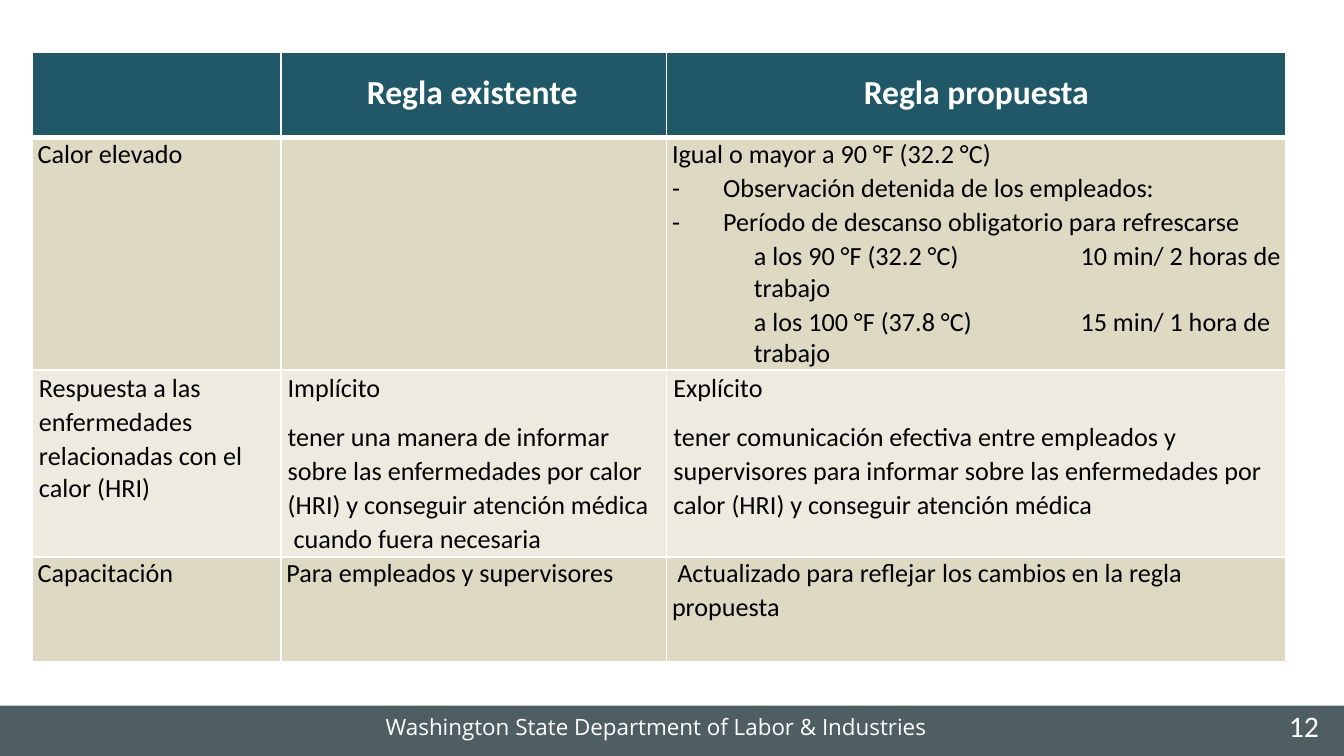
"""Build a slide that sets the current heat rule beside the proposed one."""
from lxml import etree
from pptx import Presentation
from pptx.dml.color import RGBColor
from pptx.enum.shapes import MSO_SHAPE
from pptx.enum.text import PP_ALIGN
from pptx.oxml.ns import qn
from pptx.util import Inches, Pt

RECT = MSO_SHAPE.RECTANGLE
LEFT, MID = PP_ALIGN.LEFT, PP_ALIGN.CENTER
WIDE = 10
HIGH = WIDE * 9 / 16
TEAL, SAND, PALE, SLATE = "205868", "DDD9C3", "EDEBE0", "4F5E63"
WHITE, BLACK = "FFFFFF", "000000"

COLS = [1.85, 2.87, 4.61]
ROWS = [0.63, 1.69, 1.39, 0.78]
FILLS = [TEAL, SAND, PALE, SAND]
STYLES = {
    "head": {"left": 0.64, "before": 11.1},
    "mid": {"before": 11.1, "align": MID},
    "top": {"left": 0.04, "before": 0.9},
    "inset": {"left": 0.08, "before": 0.9},
    "next": {"left": 0.04, "before": 1.2},
    "dash": {"left": 0.42, "first": -0.38, "before": 1.2, "mark": "-"},
    "rest": {"left": 0.65, "before": 1.2, "tab": 2.43},
    "fixed": {"left": 0.05, "before": 0.7, "line": Pt(18)},
    "end": {"left": 0.05, "before": 0.5},
    "kind": {"left": 0.05, "before": 1.1},
    "body": {"left": 0.05, "before": 8.1, "line": 1.07},
}
CELLS = [
    [[], [("head", "Regla existente")], [("mid", "Regla propuesta")]],
    [
        [("top", "Calor elevado")],
        [],
        [
            ("top", "Igual o mayor a 90 °F (32.2 °C)"),
            ("dash", "Observación detenida de los empleados:"),
            ("dash", "Período de descanso obligatorio para refrescarse"),
            ("rest", "a los 90 °F (32.2 °C)\t10 min/ 2 horas de trabajo"),
            ("rest", "a los 100 °F (37.8 °C)\t15 min/ 1 hora de trabajo"),
        ],
    ],
    [
        [
            ("fixed", "Respuesta a las \venfermedades \vrelacionadas con el"),
            ("end", "calor (HRI)"),
        ],
        [
            ("kind", "Implícito"),
            ("body", "tener una manera de informar \vsobre las enfermedades por calor "
                     "\v(HRI) y conseguir atención médica\v cuando fuera necesaria"),
        ],
        [
            ("kind", "Explícito"),
            ("body", "tener comunicación efectiva entre empleados y \vsupervisores para "
                     "informar sobre las enfermedades por \vcalor (HRI) y conseguir "
                     "atención médica"),
        ],
    ],
    [
        [("top", "Capacitación")],
        [("top", "Para empleados y supervisores")],
        [
            ("inset", "Actualizado para reflejar los cambios en la regla"),
            ("next", "propuesta"),
        ],
    ],
]
NOTES = [
    ("Washington State Department of Labor & Industries",
     (2.86, 5.3, 4.19, 0.22), 0.01, "Open Sans", 12, {"left": 0.01, "before": 0.6}),
    ("12", (9.55, 5.31, 0.31, 0.25), 0, "Calibri", 16,
     {"left": 0.04, "line": Pt(16.1)}),
]


def paint(part, hue):
    part.solid()
    part.fore_color.rgb = RGBColor.from_string(hue)


def write(para, text, face, size, hue, bold=False, left=0, first=0,
          before=0, line=None, align=LEFT, mark=None, tab=None):
    para.text = text
    para.alignment = align
    para.space_before = Pt(before)
    para.line_spacing = line
    props = para._p.get_or_add_pPr()
    props.set("marL", str(Inches(left)))
    if first:
        props.set("indent", str(Inches(first)))
    if mark:
        etree.SubElement(props, qn("a:buFont"), typeface=face)
        etree.SubElement(props, qn("a:buChar"), char=mark)
    if tab:
        stops = etree.SubElement(props, qn("a:tabLst"))
        etree.SubElement(stops, qn("a:tab"), pos=str(Inches(tab)), algn="l")
    font = para.font
    font.name, font.size, font.bold = face, Pt(size), bold
    font.color.rgb = RGBColor.from_string(hue)


def edge(cell, sides):
    props = cell._tc.get_or_add_tcPr()
    for spot, (side, width) in enumerate(sides):
        line = etree.Element(qn("a:ln" + side), w=str(Pt(width)))
        fill = etree.SubElement(line, qn("a:solidFill"))
        etree.SubElement(fill, qn("a:srgbClr"), val=WHITE)
        props.insert(spot, line)


def fill_cell(cell, row, items):
    head = row == 0
    kind = bool(items) and items[0][0] == "kind"
    cell.margin_left = cell.margin_right = cell.margin_bottom = 0
    cell.margin_top = Inches(0.15 if head else 0.02 if kind else 0.01)
    paint(cell.fill, FILLS[row])
    edge(cell, [("L", 1), ("R", 1), ("T", 3 if row == 1 else 1),
                ("B", 3 if head else 1)])
    frame = cell.text_frame
    for spot, (style, text) in enumerate(items):
        para = frame.add_paragraph() if spot else frame.paragraphs[0]
        write(para, text, "Calibri", 18 if head else 14,
              WHITE if head else BLACK, head, **STYLES[style])


def add_grid(slide):
    box = [Inches(n) for n in (0.24, 0.39, sum(COLS), sum(ROWS))]
    table = slide.shapes.add_table(len(ROWS), len(COLS), *box).table
    for col, width in zip(table.columns, COLS):
        col.width = Inches(width)
    for row, height in zip(table.rows, ROWS):
        row.height = Inches(height)
    for row, line in enumerate(CELLS):
        for col, items in enumerate(line):
            fill_cell(table.cell(row, col), row, items)


def add_foot(slide):
    top = 5.25
    bar = slide.shapes.add_shape(RECT, 0, Inches(top), Inches(WIDE),
                                 Inches(HIGH - top))
    bar.shadow.inherit = False
    paint(bar.fill, SLATE)
    bar.line.fill.background()
    for text, box, inset, face, size, style in NOTES:
        frame = slide.shapes.add_textbox(*map(Inches, box)).text_frame
        frame.word_wrap = True
        frame.margin_left = frame.margin_right = frame.margin_bottom = 0
        frame.margin_top = Inches(inset)
        write(frame.paragraphs[0], text, face, size, WHITE, **style)


def main():
    deck = Presentation()
    deck.slide_width, deck.slide_height = Inches(WIDE), Inches(HIGH)
    slide = deck.slides.add_slide(deck.slide_layouts[6])
    add_grid(slide)
    add_foot(slide)
    deck.save("out.pptx")


if __name__ == "__main__":
    main()
